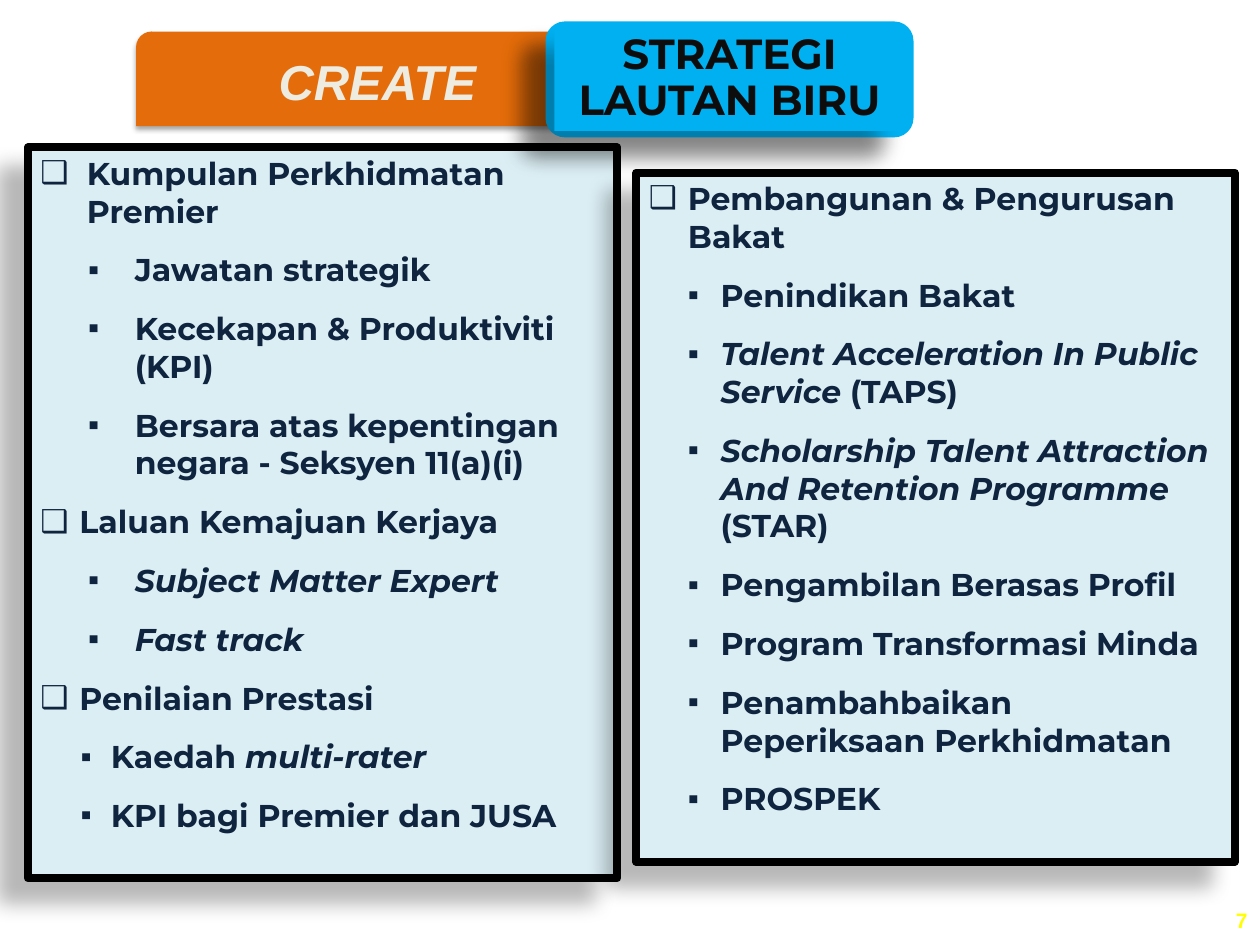
from lxml import etree
from pptx import Presentation
from pptx.dml.color import RGBColor
from pptx.enum import shapes, text
from pptx.oxml.ns import qn
from pptx.util import Emu, Inches, Pt

COLS, ROWS = 100, 75  # grid over the slide, one cell is 0.1 inch
SOFT = dict(alpha=35, blur=3.1, dist=1.8, angle=90)
DEEP = dict(alpha=28, blur=11.8, dist=19.7, angle=141)


def rgb(value):
    return RGBColor.from_string(value)


def add_bullet(p, char, left, hang):
    """Give a paragraph a bullet with a hanging indent, in inches."""
    pPr = p._p.get_or_add_pPr()
    pPr.set("marL", str(Inches(left)))
    pPr.set("indent", str(-Inches(hang)))
    etree.SubElement(pPr, qn("a:buFont")).set("typeface", "Arial")
    etree.SubElement(pPr, qn("a:buChar")).set("char", char)


def write(p, content, font="Montserrat", size=18, color="0F243E", italic=False,
          align=text.PP_ALIGN.LEFT, spacing=1.0, after=0, bullet=None):
    """Fill a paragraph; words between asterisks are italic."""
    if bullet:
        add_bullet(p, *bullet)
    p.alignment, p.line_spacing = align, spacing
    p.space_before, p.space_after = Pt(0), Pt(after)
    for i, part in enumerate(content.split("*")):
        if part:
            r = p.add_run()
            r.text = part
            r.font.name, r.font.size = font, Pt(size)
            r.font.bold, r.font.italic = True, italic or i % 2 == 1
            r.font.color.rgb = rgb(color)


class Deck:
    def __init__(self):
        self.prs = Presentation()
        self.prs.slide_width, self.prs.slide_height = Inches(10), Inches(7.5)
        self.s = self.prs.slides.add_slide(self.prs.slide_layouts[3])

    def box(self, col, row, cols, rows):
        w, h = self.prs.slide_width / COLS, self.prs.slide_height / ROWS
        return [Emu(round(v)) for v in (col * w, row * h, cols * w, rows * h)]

    def place(self, sp, grid):
        sp.left, sp.top, sp.width, sp.height = self.box(*grid)
        self.s.shapes._spTree.append(sp._element)  # bring to front

    def style(self, sp, fill, shadow, line=None):
        sp.fill.solid()
        sp.fill.fore_color.rgb = rgb(fill)
        if line:
            sp.line.color.rgb, sp.line.width = rgb(line), Pt(4.5)
        else:
            sp.line.fill.background()
        sp.shadow.inherit = False
        effects = sp._element.spPr.find(qn("a:effectLst"))
        outer = etree.SubElement(
            effects, qn("a:outerShdw"), blurRad=str(Pt(shadow["blur"])),
            dist=str(Pt(shadow["dist"])), dir=str(shadow["angle"] * 60000),
            rotWithShape="0")
        clr = etree.SubElement(outer, qn("a:srgbClr"), val="000000")
        etree.SubElement(clr, qn("a:alpha"), val=str(shadow["alpha"] * 1000))

    def frame(self, sp, anchor, x=0.1, y=0.05):
        tf = sp.text_frame
        tf.word_wrap, tf.auto_size = True, text.MSO_AUTO_SIZE.NONE
        tf.vertical_anchor = anchor
        tf.margin_left = tf.margin_right = Inches(x)
        tf.margin_top = tf.margin_bottom = Inches(y)
        return tf

    def shape(self, kind, grid, fill, shadow):
        sp = self.s.shapes.add_shape(kind, *self.box(*grid))
        self.style(sp, fill, shadow)
        return sp

    def title(self, lines, grid, fill):
        sp = self.s.shapes.title
        self.place(sp, grid)
        self.style(sp, fill, DEEP)
        tf = self.frame(sp, text.MSO_ANCHOR.MIDDLE, 0.12, 0.12)
        for i, line in enumerate(lines):
            write(tf.add_paragraph() if i else tf.paragraphs[0], line, size=24,
                  color="0D0D0D", align=text.PP_ALIGN.CENTER, spacing=0.9)

    def panel(self, idx, grid, items):
        sp = self.s.placeholders[idx]
        self.place(sp, grid)
        self.style(sp, "DBEEF4", DEEP, line="000000")
        tf = self.frame(sp, text.MSO_ANCHOR.TOP)
        for i, (bullet, content) in enumerate(items):
            write(tf.add_paragraph() if i else tf.paragraphs[0], content,
                  after=12, bullet=bullet)

    def label(self, grid, content, **fmt):
        sp = self.s.shapes.add_textbox(*self.box(*grid))
        write(self.frame(sp, text.MSO_ANCHOR.MIDDLE).paragraphs[0], content, **fmt)


# Bullet styles: character, left indent, hanging indent
HEAD_WIDE = ("❑", 0.37, 0.37)
HEAD = ("❑", 0.31, 0.31)
SUB_WIDE = ("▪", 0.75, 0.37)
SUB = ("▪", 0.56, 0.24)
SUB_RIGHT = ("▪", 0.57, 0.26)

LEFT = [
    (HEAD_WIDE, "Kumpulan Perkhidmatan Premier"),
    (SUB_WIDE, "Jawatan strategik"),
    (SUB_WIDE, "Kecekapan & Produktiviti (KPI)"),
    (SUB_WIDE, "Bersara atas kepentingan negara - Seksyen 11(a)(i)"),
    (HEAD, "Laluan Kemajuan Kerjaya"),
    (SUB_WIDE, "*Subject Matter Expert*"),
    (SUB_WIDE, "*Fast track*"),
    (HEAD, "Penilaian Prestasi"),
    (SUB, "Kaedah *multi-rater*"),
    (SUB, "KPI bagi Premier dan JUSA"),
]
RIGHT = [(HEAD, "Pembangunan & Pengurusan Bakat")] + [(SUB_RIGHT, t) for t in (
    "Penindikan Bakat",
    "*Talent Acceleration In Public Service *(TAPS)",
    "*Scholarship Talent Attraction And Retention Programme *(STAR)",
    "Pengambilan Berasas Profil",
    "Program Transformasi Minda",
    "Penambahbaikan Peperiksaan Perkhidmatan",
    "PROSPEK",
)]


def main():
    deck = Deck()

    # Page number
    deck.label((76.7, 71, 23.3, 4), "7", font="Arial", size=12,
               color="FFFF00", align=text.PP_ALIGN.RIGHT)

    # Orange tab
    tab = deck.shape(shapes.MSO_SHAPE.ROUND_2_SAME_RECTANGLE,
                     (10.8, 2.5, 38.3, 7.5), "E46C0A", SOFT)
    tf = deck.frame(tab, text.MSO_ANCHOR.MIDDLE, 0, 0)
    write(tf.paragraphs[0], "CREATE", font="Arial", size=28, color="EEECE1",
          italic=True, align=text.PP_ALIGN.CENTER)

    # Two lists
    deck.panel(1, (2.2, 11.7, 46.8, 58), LEFT)
    deck.panel(2, (50.5, 13.7, 47.5, 54.7), RIGHT)

    # Blue heading on its rounded card
    deck.shape(shapes.MSO_SHAPE.ROUNDED_RECTANGLE,
               (43.3, 1.7, 29.2, 9.2), "00B0F0", DEEP)
    deck.title(["STRATEGI", "LAUTAN BIRU"], (44, 2.1, 27.8, 8.3), "00B0F0")

    deck.prs.save("out.pptx")


if __name__ == "__main__":
    main()
